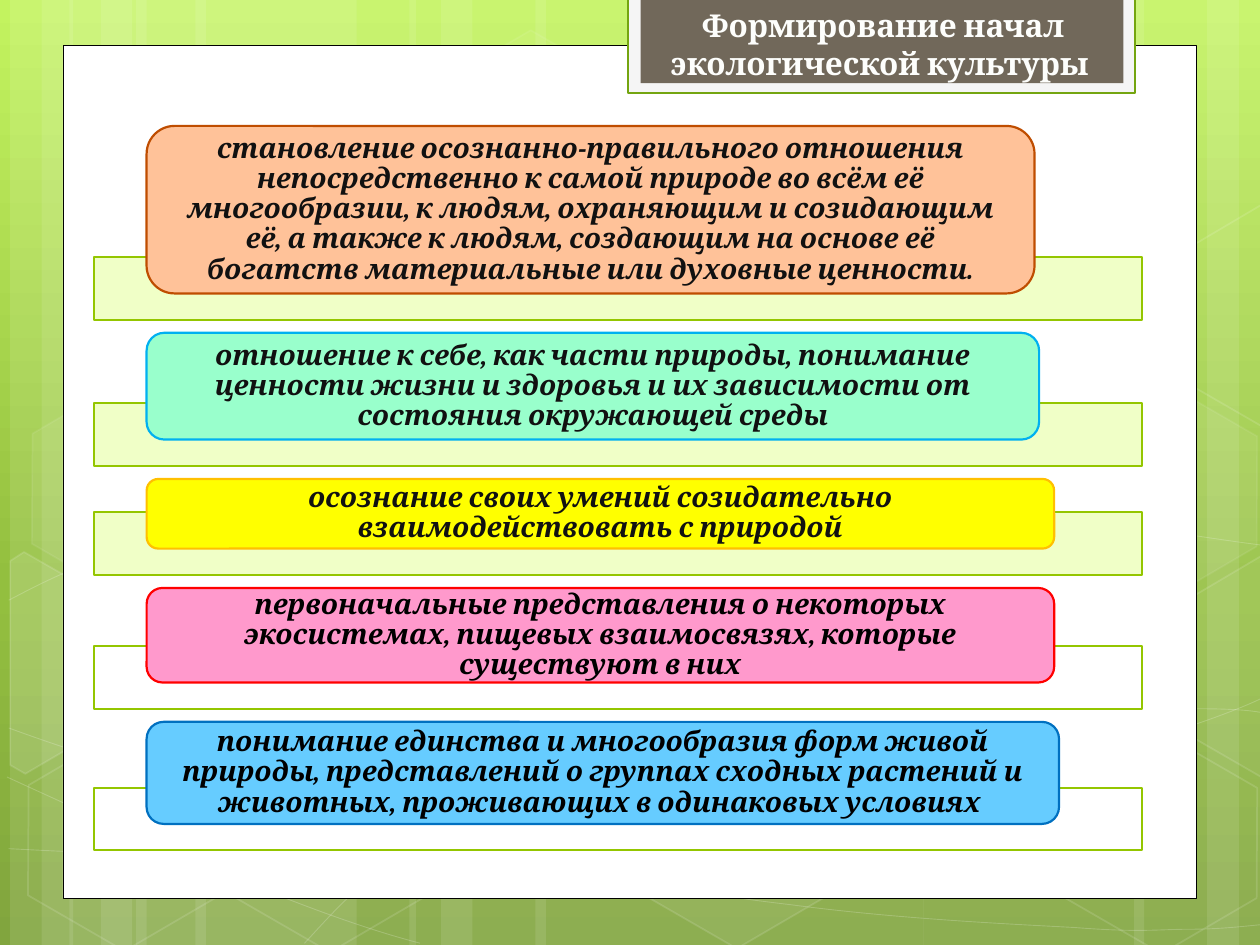
from copy import deepcopy
from dataclasses import dataclass
from typing import Optional

from lxml.etree import SubElement
from pptx import Presentation
from pptx.dml.color import RGBColor
from pptx.enum.shapes import MSO_SHAPE
from pptx.enum.text import MSO_ANCHOR, PP_ALIGN
from pptx.oxml.ns import qn
from pptx.util import Pt

COLOURS = {
    "sky": "C3F35F", "leaf": "93BF3F", "moss": "81A53E", "white": "FFFFFF",
    "black": "000000", "ink": "111111", "smoke": "F5F5F5", "stem": "74A510",
    "earth": "71685A", "title": "FDFEFC", "lime": "94C600", "pale lime": "EFFFC1",
    "peach": "FFC299", "rust": "BF4D00", "mint": "99FFCC", "azure": "00B0F0",
    "yellow": "FFFF00", "amber": "FFC000", "pink": "FF99CC", "red": "FF0000",
    "sky blue": "66CCFF", "blue": "0070C0",
}


@dataclass
class Style:
    """Fill and outline, with opacity in percent."""
    fill: Optional[str] = None
    fill_opacity: int = 100
    line: Optional[str] = None
    line_width: float = 1
    line_opacity: int = 100


@dataclass
class Panel:
    """A rounded statement lying over its bar."""
    text: str
    width: float
    height: float
    fill: str
    line: str
    ink: str
    bar: str


@dataclass
class Hexagon:
    """A tilted background hexagon."""
    left: float
    top: float
    fill_opacity: int
    line_opacity: int


STRIPES = [(77.8, 126), (5.8, 36), (23.8, 60), (111.6, 126), (39.6, 36), (57.6, 60),
           (527.8, 126), (689.8, 36), (648, 60), (306, 222), (234, 36), (252, 60)]

CURVES = [
    [(5, 485), (44, 487), (83, 489), (137, 488), (191, 487), (258, 486), (330, 479),
     (402, 472), (504, 458), (570, 444), (636, 431), (703, 409), (725, 397)],
    [(5, 343), (26, 332), (47, 321), (87, 310), (128, 300), (186, 284), (250, 279),
     (314, 274), (392, 273), (471, 279), (550, 284), (682, 307), (725, 312)],
    [(4, 444), (91, 484), (178, 523), (240, 539)],
    [(5, 416), (27, 424), (50, 432), (92, 444), (134, 454), (197, 472), (257, 485),
     (317, 497), (392, 510), (452, 517), (512, 525), (576, 528), (614, 530),
     (652, 533), (662, 531), (680, 531), (699, 531), (713, 529), (725, 528)],
    [(174, 539), (187, 525), (200, 510), (217, 498), (234, 485), (259, 470), (279, 460),
     (300, 450), (312, 446), (338, 438), (364, 431), (413, 421), (438, 416),
     (464, 411), (467, 411), (490, 410), (512, 408), (547, 405), (572, 405),
     (597, 405), (638, 405), (638, 405), (654, 405), (670, 405), (686, 405),
     (704, 405), (718, 406), (724, 408)],
]

HEXAGONS = [
    Hexagon(240.5, 25.9, 4, 8), Hexagon(357.8, 424.1, 6, 12),
    Hexagon(7.9, 425.5, 0, 12), Hexagon(10.1, 224.6, 7, 8),
    Hexagon(125.3, 426.2, 0, 12), Hexagon(542.2, 326.2, 10, 12),
    Hexagon(600.5, 427, 0, 12), Hexagon(600.5, 226.1, 7, 8),
]
TILT = 30

LEFT_CELL = [(-23.9, 339.2), (-19.6, 330.8), (44.2, 330.6),
             (75.3, 385.8), (44.4, 440.2), (34.4, 440.2)]
RIGHT_CELL = [(660.2, 373.9), (690.8, 319.6), (697.5, 319.6),
              (757.7, 423.7), (754.7, 428.8), (691.5, 428.8)]
CELLS = [(LEFT_CELL, 0, 10), (RIGHT_CELL, 0, 4), (RIGHT_CELL, -200.6, 0)]

PANELS = [
    Panel("становление осознанно-правильного отношения непосредственно к самой природе "
          "во всём её многообразии, к людям, охраняющим и созидающим её, а также к людям, "
          "создающим на основе её богатств материальные или духовные ценности.",
          507.4, 95.7, "peach", "rust", "ink", "pale lime"),
    Panel("отношение к себе, как части природы, понимание ценности жизни и здоровья "
          "и их зависимости от состояния окружающей среды",
          510, 61, "mint", "azure", "ink", "pale lime"),
    Panel("осознание своих умений созидательно взаимодействовать с природой",
          518.6, 39.8, "yellow", "amber", "ink", "pale lime"),
    Panel("первоначальные представления о некоторых экосистемах, пищевых взаимосвязях, "
          "которые существуют в них", 518.6, 54, "pink", "red", "black", "white"),
    Panel("понимание единства и многообразия форм живой природы, представлений о группах "
          "сходных растений и животных, проживающих в одинаковых условиях ",
          521.4, 58.3, "sky blue", "blue", "black", "white"),
]
BAR_HEIGHT, BAR_OVERLAP, PANEL_GAP = 35.7, 20.7, 7.5


def apply_format(target, values: dict) -> None:
    """Set every named attribute on the target."""
    for name, value in values.items():
        setattr(target, name, value)


def colour(name: str) -> RGBColor:
    """Look a colour up by name."""
    return RGBColor.from_string(COLOURS[name])


def set_opacity(shape, query: str, percent: int) -> None:
    """Make the colour found by the query translucent."""
    if percent < 100:
        found = shape.element.spPr.xpath(query)[0]
        SubElement(found, qn("a:alpha"), val=str(percent * 1000))


def apply_style(shape, style: Style) -> None:
    """Give a shape its fill and outline without a shadow."""
    shape.shadow.inherit = False
    if style.fill and style.fill_opacity:
        shape.fill.solid()
        shape.fill.fore_color.rgb = colour(style.fill)
        set_opacity(shape, "a:solidFill/a:srgbClr", style.fill_opacity)
    else:
        shape.fill.background()
    if style.line:
        shape.line.color.rgb = colour(style.line)
        shape.line.width = Pt(style.line_width)
        set_opacity(shape, "a:ln/a:solidFill/a:srgbClr", style.line_opacity)
    else:
        shape.line.fill.background()


def draw_shape(page, kind, left: float, top: float, width: float, height: float, style: Style):
    """Add a styled preset shape."""
    shape = page.shapes.add_shape(kind, Pt(left), Pt(top), Pt(width), Pt(height))
    apply_style(shape, style)
    return shape


def draw_outline(page, points: list, style: Style, close: bool):
    """Add a freeform through the points."""
    start, *rest = [(Pt(x), Pt(y)) for x, y in points]
    builder = page.shapes.build_freeform(*start)
    builder.add_line_segments(rest, close=close)
    shape = builder.convert_to_shape()
    apply_style(shape, style)
    return shape


def draw_curve(page, nodes: list, style: Style) -> None:
    """Add a chain of cubic Bezier segments."""
    shape = draw_outline(page, nodes, style, False)
    segments = shape.element.spPr.xpath(".//a:lnTo")
    track = segments[0].getparent()
    for first in range(0, len(segments), 3):
        cubic = SubElement(track, qn("a:cubicBezTo"))
        for segment in segments[first:first + 3]:
            cubic.append(segment[0])
            track.remove(segment)


def write_text(box, text: str, size: float, ink: str, italic: bool, spacing: float, frame: dict) -> None:
    """Fill a box with one centred bold paragraph."""
    apply_format(box.text_frame, {"word_wrap": True, **frame})
    para = box.text_frame.paragraphs[0]
    apply_format(para, {"alignment": PP_ALIGN.CENTER, "line_spacing": spacing})
    span = para.add_run()
    span.text = text
    apply_format(span.font, {"name": "Cambria", "size": Pt(size), "bold": True, "italic": italic})
    span.font.color.rgb = colour(ink)


def draw_background(page) -> None:
    """Paint the gradient, stripes, curves and hexagons."""
    fill = page.background.fill
    fill.gradient()
    fill.gradient_angle = 270
    stops = page.element.xpath(".//p:bg//a:gsLst")[0]
    stops.insert(1, deepcopy(stops[0]))
    for stop, (position, name) in zip(fill.gradient_stops, [(0, "sky"), (0.62, "leaf"), (1, "moss")]):
        stop.position = position
        stop.color.rgb = colour(name)
    for left, width in STRIPES:
        draw_shape(page, MSO_SHAPE.RECTANGLE, left, 0, width, 540, Style("white", 10))
    for nodes in CURVES:
        draw_curve(page, nodes, Style(line="white", line_width=0.5, line_opacity=20))
    for item in HEXAGONS:
        style = Style("white", item.fill_opacity, "white", 1, item.line_opacity)
        cell = draw_shape(page, MSO_SHAPE.HEXAGON, item.left, item.top, 126, 109.4, style)
        cell.rotation = TILT
        cell.adjustments[0] = 0.285
    for points, shift, opacity in CELLS:
        moved = [(x, y + shift) for x, y in points]
        cell = draw_outline(page, moved, Style("white", opacity, "white", 1, 12), True)
        cell.rotation = TILT


def draw_panels(page) -> None:
    """Stack the statements, each over its bar."""
    top = 72
    insets = {"margin_left": Pt(16), "margin_right": Pt(16), "margin_top": 0,
              "margin_bottom": 0, "vertical_anchor": MSO_ANCHOR.MIDDLE}
    for panel in PANELS:
        bar_top = top + panel.height - BAR_OVERLAP
        draw_shape(page, MSO_SHAPE.RECTANGLE, 53.8, bar_top, 599, BAR_HEIGHT,
                   Style(panel.bar, 90, "lime", 1.25))
        box = draw_shape(page, MSO_SHAPE.ROUNDED_RECTANGLE, 83.8, top, panel.width, panel.height,
                         Style(panel.fill, line=panel.line, line_width=1.25))
        write_text(box, panel.text, 16, panel.ink, True, 0.9, insets)
        top = bar_top + BAR_HEIGHT + PANEL_GAP


def main() -> None:
    """Build and save the deck."""
    deck = Presentation()
    apply_format(deck, {"slide_width": Pt(720), "slide_height": Pt(540)})
    page = deck.slides.add_slide(deck.slide_layouts[6])
    draw_background(page)
    draw_shape(page, MSO_SHAPE.RECTANGLE, 36, 26, 648, 487.3, Style("white", line="black", line_width=0.5))
    draw_shape(page, MSO_SHAPE.RECTANGLE, 359, -1.5, 289.5, 54.7, Style("smoke", line="stem", line_width=1.25))
    draw_shape(page, MSO_SHAPE.RECTANGLE, 366, -1.5, 276, 49, Style("earth"))
    draw_panels(page)
    heading = page.shapes.add_textbox(Pt(371.5), Pt(0), Pt(266.4), Pt(51))
    write_text(heading, "Формирование начал экологической культуры ", 18, "title", False, 1.0, {})
    deck.save("out.pptx")


if __name__ == "__main__":
    main()
